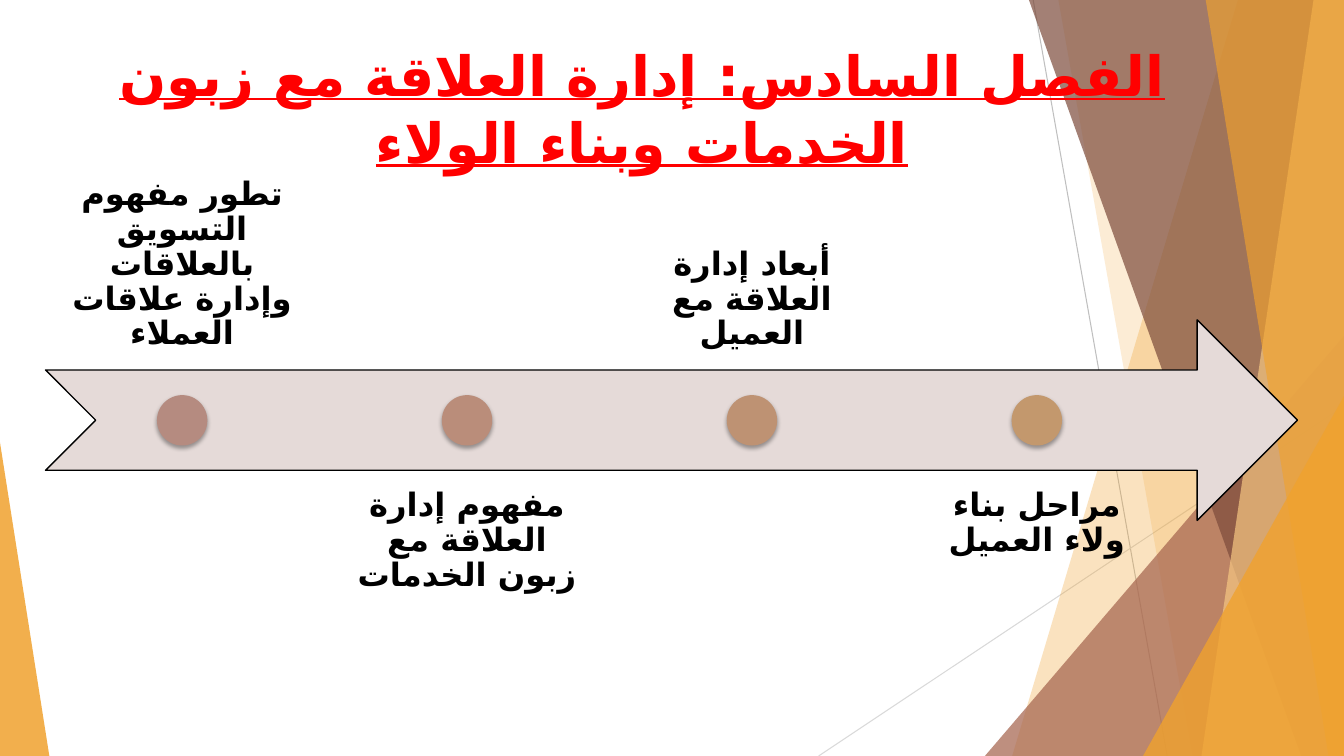
from dataclasses import dataclass

from lxml.etree import SubElement
from pptx import Presentation
from pptx.dml.color import RGBColor
from pptx.enum.shapes import MSO_CONNECTOR, MSO_SHAPE
from pptx.enum.text import MSO_ANCHOR, PP_ALIGN
from pptx.oxml.ns import qn
from pptx.shapes.autoshape import Shape
from pptx.slide import Slide
from pptx.util import Pt

WIDTH, HEIGHT = 960, 540
FONT = "Roboto"
ARABIC_FONT = "DejaVu Sans"  # Roboto has no Arabic letters


@dataclass
class Band:
    """Facet from the right slide edge to a slanted left side."""
    top_x: float
    bottom_x: float
    color: str
    opacity: int


@dataclass
class Corner:
    """Triangle standing on the bottom edge of the slide."""
    left: float
    top: float
    width: float
    apex: float
    color: str
    opacity: int


@dataclass
class Ray:
    start: tuple[float, float]
    end: tuple[float, float]
    color: str


@dataclass
class Milestone:
    text: str
    dot_color: str


RAYS = [
    Ray((738, 0), (833.75, HEIGHT), "BFBFBF"),
    Ray((WIDTH, 290), (584.75, HEIGHT), "D9D9D9"),
]
FACETS = [
    Band(884.25, 723, "F0A22E", 30),
    Band(756, 851.75, "F0A22E", 20),
    Corner(703.5, 240, 256.5, 1, "A5644E", 72),
    Band(735, 929.5, "7C4B3B", 70),
    Band(938.25, 858.25, "F6C782", 70),
    Band(861.25, 949, "F0A22E", 65),
    Corner(816.5, 283, 143.5, 1, "F0A22E", 80),
    Corner(0, 316, 35.25, 0, "F0A22E", 85),
]
TITLE = "الفصل السادس: إدارة العلاقة مع زبون الخدمات وبناء الولاء"
MILESTONES = [
    Milestone("تطور مفهوم التسويق بالعلاقات وإدارة علاقات العملاء", "B58B80"),
    Milestone("مفهوم إدارة العلاقة مع زبون الخدمات", "BA8D7A"),
    Milestone("أبعاد إدارة العلاقة مع العميل", "BE9273"),
    Milestone("مراحل بناء ولاء العميل", "C3986D"),
]

# Timeline geometry
LABEL_LEFT, LABEL_WIDTH, LABEL_HEIGHT = 33.25, 193.75, 143.25
LABEL_TOP_ABOVE, LABEL_TOP_BELOW = 121, 336.25
PITCH = 203.5
DOT_SIZE, DOT_TOP = 36, 282.25


def rgb(color: str) -> RGBColor:
    return RGBColor.from_string(color)


def paint(shape: Shape, color: str, opacity: int = 100) -> None:
    shape.shadow.inherit = False
    shape.line.fill.background()
    shape.fill.solid()
    shape.fill.fore_color.rgb = rgb(color)
    if opacity < 100:
        color_element = shape._element.spPr.find(qn("a:solidFill"))[0]
        SubElement(color_element, qn("a:alpha"), val=str(opacity * 1000))


def add_ray(slide: Slide, ray: Ray) -> None:
    points = [Pt(value) for value in ray.start + ray.end]
    connector = slide.shapes.add_connector(MSO_CONNECTOR.STRAIGHT, *points)
    connector.line.color.rgb = rgb(ray.color)
    connector.line.width = Pt(0.75)
    SubElement(connector._element.spPr, qn("a:effectLst"))


def add_band(slide: Slide, band: Band) -> None:
    builder = slide.shapes.build_freeform(Pt(band.top_x), 0)
    corners = [(WIDTH, 0), (WIDTH, HEIGHT), (band.bottom_x, HEIGHT)]
    builder.add_line_segments([(Pt(x), Pt(y)) for x, y in corners])
    paint(builder.convert_to_shape(), band.color, band.opacity)


def add_preset(slide: Slide, kind: MSO_SHAPE, left: float, top: float,
               width: float, height: float) -> Shape:
    return slide.shapes.add_shape(kind, Pt(left), Pt(top), Pt(width), Pt(height))


def add_corner(slide: Slide, corner: Corner) -> None:
    shape = add_preset(slide, MSO_SHAPE.ISOSCELES_TRIANGLE, corner.left,
                       corner.top, corner.width, HEIGHT - corner.top)
    shape.adjustments[0] = corner.apex
    paint(shape, corner.color, corner.opacity)


def add_text(slide: Slide, text: str, left: float, top: float, width: float,
             height: float, size: float, color: str) -> Shape:
    """Add a centred, bold, right-to-left text box."""
    box = slide.shapes.add_textbox(Pt(left), Pt(top), Pt(width), Pt(height))
    box.text_frame.word_wrap = True
    paragraph = box.text_frame.paragraphs[0]
    paragraph.text = text
    paragraph.alignment = PP_ALIGN.CENTER
    font = paragraph.font
    font.name, font.size, font.bold = FONT, Pt(size), True
    font.color.rgb = rgb(color)
    properties = paragraph._p.get_or_add_pPr()
    properties.set("rtl", "1")
    SubElement(properties.find(qn("a:defRPr")), qn("a:cs"), typeface=ARABIC_FONT)
    return box


def add_label(slide: Slide, text: str, left: float, above: bool) -> None:
    top = LABEL_TOP_ABOVE if above else LABEL_TOP_BELOW
    box = add_text(slide, text, left, top, LABEL_WIDTH, LABEL_HEIGHT, 23, "000000")
    frame = box.text_frame
    frame.vertical_anchor = MSO_ANCHOR.BOTTOM if above else MSO_ANCHOR.TOP
    frame.margin_left = frame.margin_right = Pt(13)
    frame.margin_top = frame.margin_bottom = Pt(13)
    frame.paragraphs[0].line_spacing = 0.9


def add_dot(slide: Slide, left: float, color: str) -> None:
    dot = add_preset(slide, MSO_SHAPE.OVAL, left, DOT_TOP, DOT_SIZE, DOT_SIZE)
    paint(dot, color)
    effects = dot._element.spPr.find(qn("a:effectLst"))
    shadow = SubElement(effects, qn("a:outerShdw"), blurRad=str(Pt(3)),
                        dist=str(Pt(2)), dir="5400000", rotWithShape="0")
    shadow_color = SubElement(shadow, qn("a:srgbClr"), val="000000")
    SubElement(shadow_color, qn("a:alpha"), val="35000")


def main() -> None:
    presentation = Presentation()
    presentation.slide_width, presentation.slide_height = Pt(WIDTH), Pt(HEIGHT)
    slide = presentation.slides.add_slide(presentation.slide_layouts[6])

    # Faceted background
    for ray in RAYS:
        add_ray(slide, ray)
    for facet in FACETS:
        if isinstance(facet, Band):
            add_band(slide, facet)
        else:
            add_corner(slide, facet)

    # Title
    title = add_text(slide, TITLE, 11.5, 26, 894.25, 117.25, 39.6, "FF0000")
    title.text_frame.paragraphs[0].font.underline = True

    # Timeline arrow
    arrow = add_preset(slide, MSO_SHAPE.NOTCHED_RIGHT_ARROW, 32.5, 228.5, 894.25, 143.25)
    paint(arrow, "E5DAD8")
    arrow.line.color.rgb = rgb("000000")
    arrow.line.width = Pt(1)

    # Milestones, alternating above and below the arrow
    for index, milestone in enumerate(MILESTONES):
        left = LABEL_LEFT + index * PITCH
        add_label(slide, milestone.text, left, above=index % 2 == 0)
        add_dot(slide, left + (LABEL_WIDTH - DOT_SIZE) / 2, milestone.dot_color)

    presentation.save("out.pptx")


if __name__ == "__main__":
    main()
